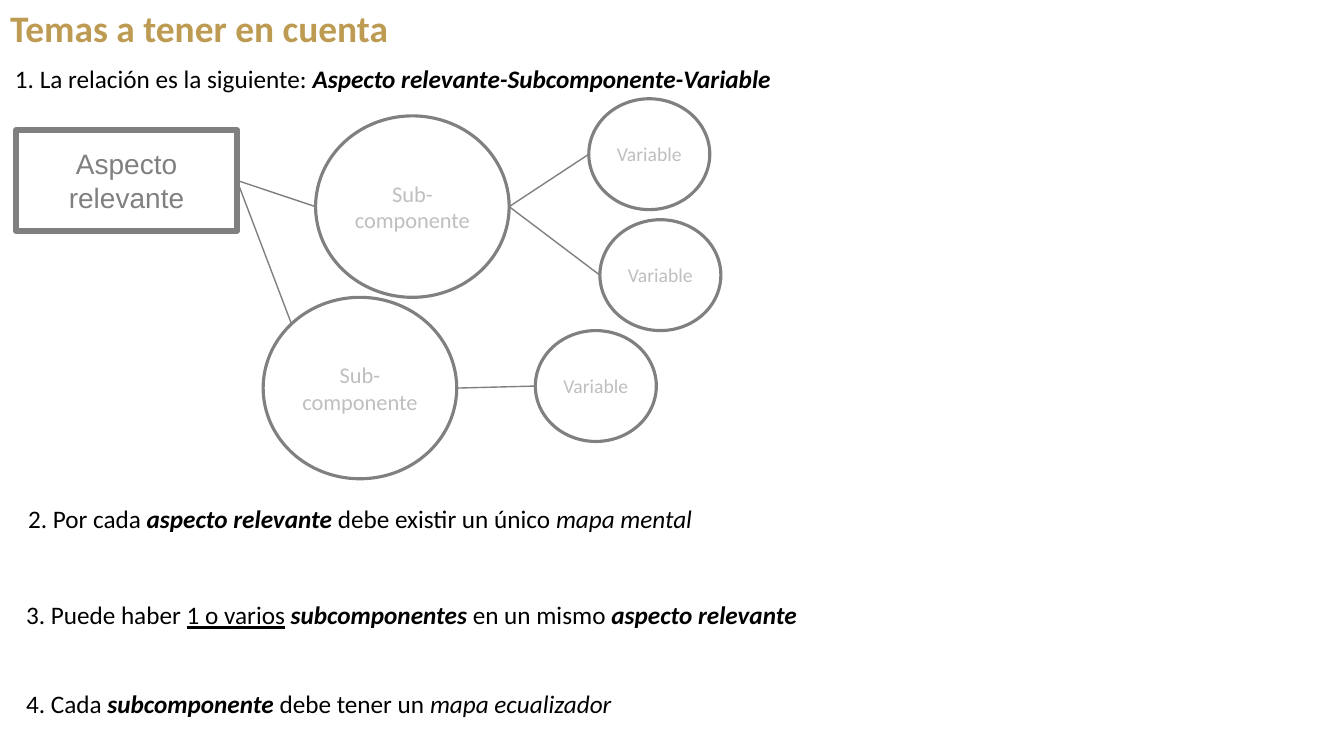
from math import cos, pi, sin

from lxml.etree import SubElement
from pptx import Presentation
from pptx.dml.color import RGBColor
from pptx.enum.shapes import MSO_CONNECTOR, MSO_SHAPE
from pptx.enum.text import MSO_ANCHOR, MSO_AUTO_SIZE, PP_ALIGN
from pptx.oxml.ns import qn
from pptx.util import Emu, Pt

PX = 9144
SLIDE_WIDTH, SLIDE_HEIGHT = 1333, 750
GOLD = RGBColor(0xBD, 0x9B, 0x53)
BLACK = RGBColor(0x00, 0x00, 0x00)
GRAY = RGBColor(0x80, 0x80, 0x80)
SILVER = RGBColor(0xBF, 0xBF, 0xBF)
WHITE = RGBColor(0xFF, 0xFF, 0xFF)

ASPECT_BOX = (0, 31, 219, 100)
SUBCOMPONENT_SIZE = (192, 180)
VARIABLE_SIZE = (120, 110)
SUBCOMPONENTS = [
    ((297, 17), pi, [(568, 0), (579, 120)]),
    ((245, 197), pi * 5 / 4, [(515, 230)]),
]

STATEMENTS = [
    ((5, 58, 771, 40), [
        ("1. La relación es la siguiente: ", ""),
        ("Aspecto relevante-Subcomponente-Variable", "bi"),
    ]),
    ((18, 494, 687, 40), [
        ("2. Por cada ", ""),
        ("aspecto relevante ", "bi"),
        ("debe existir un único ", ""),
        ("mapa mental", "i"),
    ]),
    ((16, 590, 800, 40), [
        ("3. Puede haber ", ""),
        ("1 o varios", "u"),
        (" ", ""),
        ("subcomponentes", "bi"),
        (" en un mismo ", ""),
        ("aspecto relevante", "bi"),
    ]),
    ((16, 678, 615, 40), [
        ("4. Cada ", ""),
        ("subcomponente", "bi"),
        (" debe tener un ", ""),
        ("mapa ecualizador", "i"),
    ]),
]


def px(*lengths):
    """Turn px lengths into EMU."""
    return [Emu(round(length * PX)) for length in lengths]


def write(frame, pieces, size=18, color=BLACK, font="Calibri",
          align=PP_ALIGN.LEFT, anchor=MSO_ANCHOR.TOP, wrap=True,
          auto_size=MSO_AUTO_SIZE.NONE):
    """Fill a text frame with (text, style) pieces; style letters are b, i and u."""
    frame.word_wrap = wrap
    frame.auto_size = auto_size
    frame.vertical_anchor = anchor
    paragraph = frame.paragraphs[0]
    paragraph.alignment = align
    for text, style in pieces:
        run = paragraph.add_run()
        run.text = text
        run.font.name = font
        run.font.size = Pt(size)
        run.font.color.rgb = color
        run.font.bold = "b" in style
        run.font.italic = "i" in style
        run.font.underline = "u" in style


def add_title(slide, box):
    """Place the heading in the title placeholder."""
    title = slide.shapes.title
    title.left, title.top, title.width, title.height = px(*box)
    write(title.text_frame, [("Temas a tener en cuenta", "b")], size=26.7,
          color=GOLD, align=PP_ALIGN.JUSTIFY,
          auto_size=MSO_AUTO_SIZE.SHAPE_TO_FIT_TEXT)


def add_statement(slide, box, pieces):
    """Place one numbered statement."""
    statement = slide.shapes.add_textbox(*px(*box))
    write(statement.text_frame, pieces, wrap=False,
          auto_size=MSO_AUTO_SIZE.SHAPE_TO_FIT_TEXT)


def add_node(slide, preset, box, label, line_width, fill=None, inset=0, **text_format):
    """Draw one outlined node with a centred label."""
    node = slide.shapes.add_shape(preset, *px(*box))
    node.shadow.inherit = False
    if fill is None:
        node.fill.background()
    else:
        node.fill.solid()
        node.fill.fore_color.rgb = fill
    node.line.color.rgb = GRAY
    node.line.width = Pt(line_width)
    frame = node.text_frame
    frame.margin_left, frame.margin_right = px(inset, inset)
    write(frame, [(label, "")], align=PP_ALIGN.CENTER,
          anchor=MSO_ANCHOR.MIDDLE, **text_format)
    return node


def add_link(slide, start, end):
    """Draw a thin straight link between two points."""
    link = slide.shapes.add_connector(MSO_CONNECTOR.STRAIGHT, *px(*start, *end))
    link.line.color.rgb = GRAY
    link.line.width = Pt(1)
    SubElement(link._element.spPr, qn("a:effectLst"))
    return link


def rim(box, angle):
    """Return the point of an ellipse at an angle, clockwise from its right side."""
    left, top, width, height = box
    return (left + width / 2 * (1 + cos(angle)), top + height / 2 * (1 + sin(angle)))


def add_diagram(slide, left, top):
    """Draw the tree from relevant aspect to subcomponents and variables."""
    def placed(position, size):
        return (left + position[0], top + position[1], *size)

    aspect_box = placed(ASPECT_BOX[:2], ASPECT_BOX[2:])
    aspect = add_node(slide, MSO_SHAPE.RECTANGLE, aspect_box, "Aspecto relevante",
                      4.5, inset=10, size=20, color=GRAY, font="Arial")
    aspect_side = (aspect_box[0] + aspect_box[2], aspect_box[1] + aspect_box[3] / 2)
    for position, entry_angle, variables in SUBCOMPONENTS:
        subcomponent_box = placed(position, SUBCOMPONENT_SIZE)
        add_node(slide, MSO_SHAPE.OVAL, subcomponent_box, "Sub-componente",
                 2.25, fill=WHITE, size=16, color=SILVER)
        link = add_link(slide, aspect_side, rim(subcomponent_box, entry_angle))
        link.begin_connect(aspect, 3)
        for variable_position in variables:
            variable_box = placed(variable_position, VARIABLE_SIZE)
            add_node(slide, MSO_SHAPE.OVAL, variable_box, "Variable",
                     2.25, size=14, color=SILVER)
            add_link(slide, rim(subcomponent_box, 0), rim(variable_box, pi))


def main():
    """Build the slide and save it."""
    presentation = Presentation()
    presentation.slide_width, presentation.slide_height = px(SLIDE_WIDTH, SLIDE_HEIGHT)
    slide = presentation.slides.add_slide(presentation.slide_layouts[5])
    add_title(slide, (0, 0, 1322, 55))
    add_diagram(slide, 16, 98)
    for box, pieces in STATEMENTS:
        add_statement(slide, box, pieces)
    presentation.save("out.pptx")


if __name__ == "__main__":
    main()
